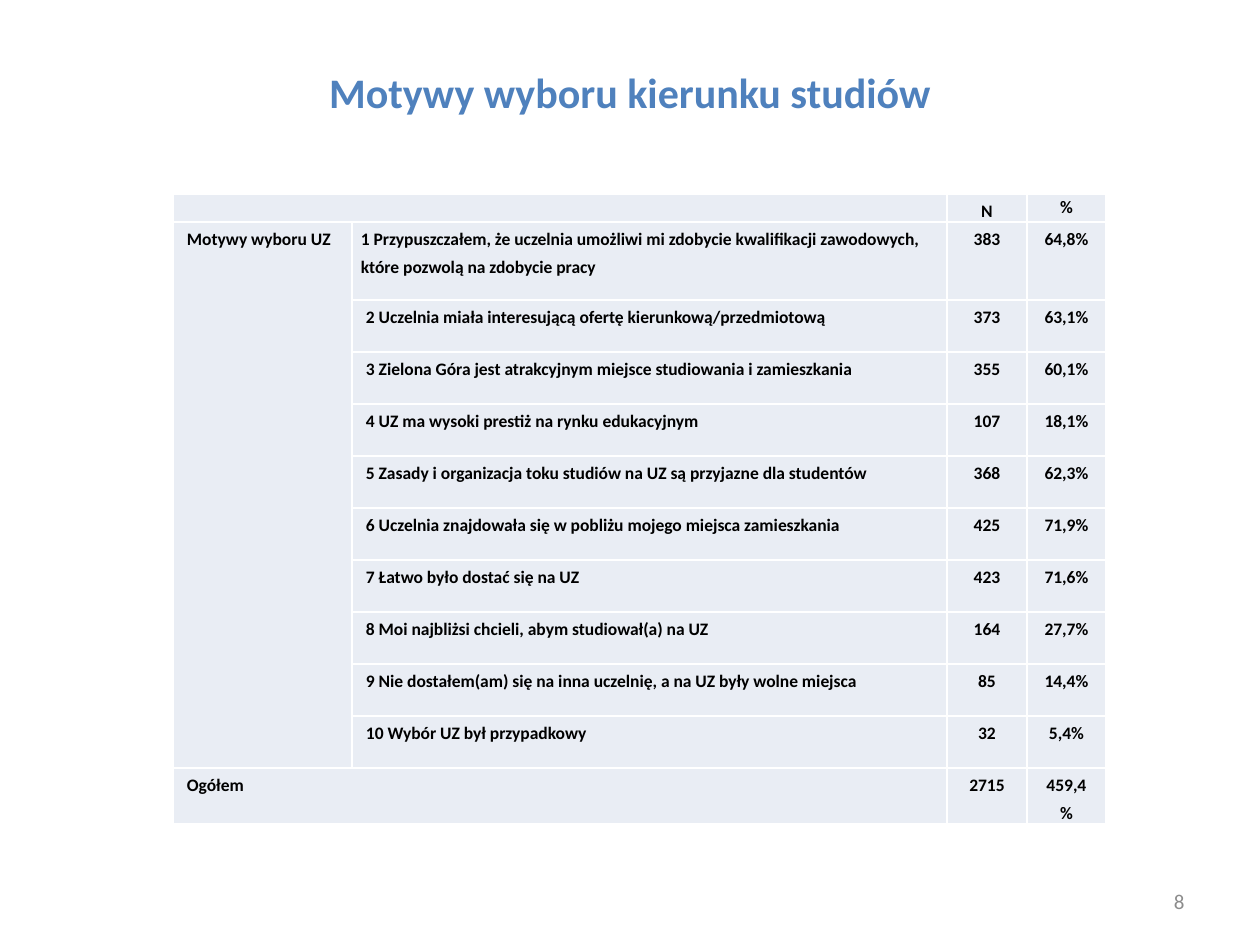
from lxml import etree
from pptx import Presentation
from pptx.dml.color import RGBColor
from pptx.enum.text import MSO_ANCHOR, PP_ALIGN
from pptx.oxml.ns import qn
from pptx.util import Emu, Pt

LEFT, CENTER, RIGHT = PP_ALIGN.LEFT, PP_ALIGN.CENTER, PP_ALIGN.RIGHT
MIDDLE = MSO_ANCHOR.MIDDLE
PX = 914400 // 126
BLUE = RGBColor(0x4F, 0x81, 0xBD)
BLACK = RGBColor(0, 0, 0)
GREY = RGBColor(0x8C, 0x8C, 0x8C)
WHITE = RGBColor(0xFF, 0xFF, 0xFF)
PALE = RGBColor(0xE9, 0xED, 0xF4)

MOTIVES = [
    ("1 Przypuszczałem, że uczelnia umożliwi mi zdobycie kwalifikacji zawodowych, "
     "które pozwolą na zdobycie pracy", "383", "64,8%"),
    ("2 Uczelnia miała interesującą ofertę kierunkową/przedmiotową", "373", "63,1%"),
    ("3 Zielona Góra jest atrakcyjnym miejsce studiowania i zamieszkania", "355", "60,1%"),
    ("4 UZ ma wysoki prestiż na rynku edukacyjnym", "107", "18,1%"),
    ("5 Zasady i organizacja toku studiów na UZ są przyjazne dla studentów", "368", "62,3%"),
    ("6 Uczelnia znajdowała się w pobliżu mojego miejsca zamieszkania", "425", "71,9%"),
    ("7 Łatwo było dostać się na UZ", "423", "71,6%"),
    ("8 Moi najbliżsi chcieli, abym studiował(a) na UZ", "164", "27,7%"),
    ("9 Nie dostałem(am) się na inna uczelnię, a na UZ były wolne miejsca", "85", "14,4%"),
    ("10 Wybór UZ był przypadkowy", "32", "5,4%"),
]


def px(length):
    return Emu(length * PX)


def write(frame, text, size=10, color=BLACK, bold=True, align=LEFT, spacing=None, indent=0):
    paragraph = frame.paragraphs[0]
    paragraph.alignment = align
    if spacing:
        paragraph.line_spacing = spacing
    if indent:
        properties = paragraph._p.get_or_add_pPr()
        properties.set("marL", str(px(indent)))
        properties.set("marR", str(px(indent)))
        properties.set("indent", "0")
    if text:
        run = paragraph.add_run()
        run.text = text
        run.font.name = "Calibri"
        run.font.size = Pt(size)
        run.font.bold = bold
        run.font.color.rgb = color
    else:
        etree.SubElement(paragraph._p, qn("a:endParaRPr"), sz=str(size * 100))


class SlideBuilder:
    """Adds styled text and tables to one slide."""

    def __init__(self, slide):
        self.slide = slide

    def text(self, text, left, top, width, height, bottom_inset=6, **style):
        box = self.slide.shapes.add_textbox(px(left), px(top), px(width), px(height))
        frame = box.text_frame
        frame.word_wrap = True
        frame.vertical_anchor = MIDDLE
        frame.margin_bottom = px(bottom_inset)
        write(frame, text, **style)

    def table(self, left, top, widths, heights):
        table = self.slide.shapes.add_table(
            len(heights), len(widths), px(left), px(top), px(sum(widths)), px(sum(heights))
        ).table
        table.first_row = table.horz_banding = False
        for column, width in zip(table.columns, widths):
            column.width = px(width)
        for row, height in zip(table.rows, heights):
            row.height = px(height)
        return table

    def cell(self, cell, text, **style):
        cell.margin_left = cell.margin_right = px(9)
        cell.margin_top = cell.margin_bottom = 0
        cell.fill.solid()
        cell.fill.fore_color.rgb = PALE
        properties = cell._tc.get_or_add_tcPr()
        for position, side in enumerate(("lnL", "lnR", "lnT", "lnB")):
            line = etree.Element(qn(f"a:{side}"), w=str(Pt(1)))
            fill = etree.SubElement(line, qn("a:solidFill"))
            etree.SubElement(fill, qn("a:srgbClr"), val=str(WHITE))
            properties.insert(position, line)
        write(cell.text_frame, text, **{"spacing": Pt(16), "indent": 5, **style})


def main():
    deck = Presentation()
    deck.slide_width, deck.slide_height = px(1260), px(945)
    builder = SlideBuilder(deck.slides.add_slide(deck.slide_layouts[6]))

    builder.text("Motywy wyboru kierunku studiów", 63, 38, 1134, 158,
                 bottom_inset=57, size=24, color=BLUE, align=CENTER)

    rows = [("", "", "N", "%"), *(("", *motive) for motive in MOTIVES),
            ("Ogółem", "", "2715", "459,4%")]
    rows[1] = ("Motywy wyboru UZ", *MOTIVES[0])
    last = len(rows) - 1
    table = builder.table(173, 194, [179, 595, 80, 79], [28, 78] + [52] * (last - 1))
    table.cell(0, 0).merge(table.cell(0, 1))
    table.cell(1, 0).merge(table.cell(last - 1, 0))
    table.cell(last, 0).merge(table.cell(last, 1))

    exceptions = {(0, 3): {"spacing": 1.15, "indent": 0}, (1, 1): {"indent": 0}}
    for row, values in enumerate(rows):
        for column, value in enumerate(values):
            builder.cell(table.cell(row, column), value,
                         align=CENTER if column > 1 else LEFT,
                         **exceptions.get((row, column), {}))

    builder.text("8", 903, 876, 294, 50, size=12, color=GREY, bold=False, align=RIGHT)
    deck.save("out.pptx")


if __name__ == "__main__":
    main()
